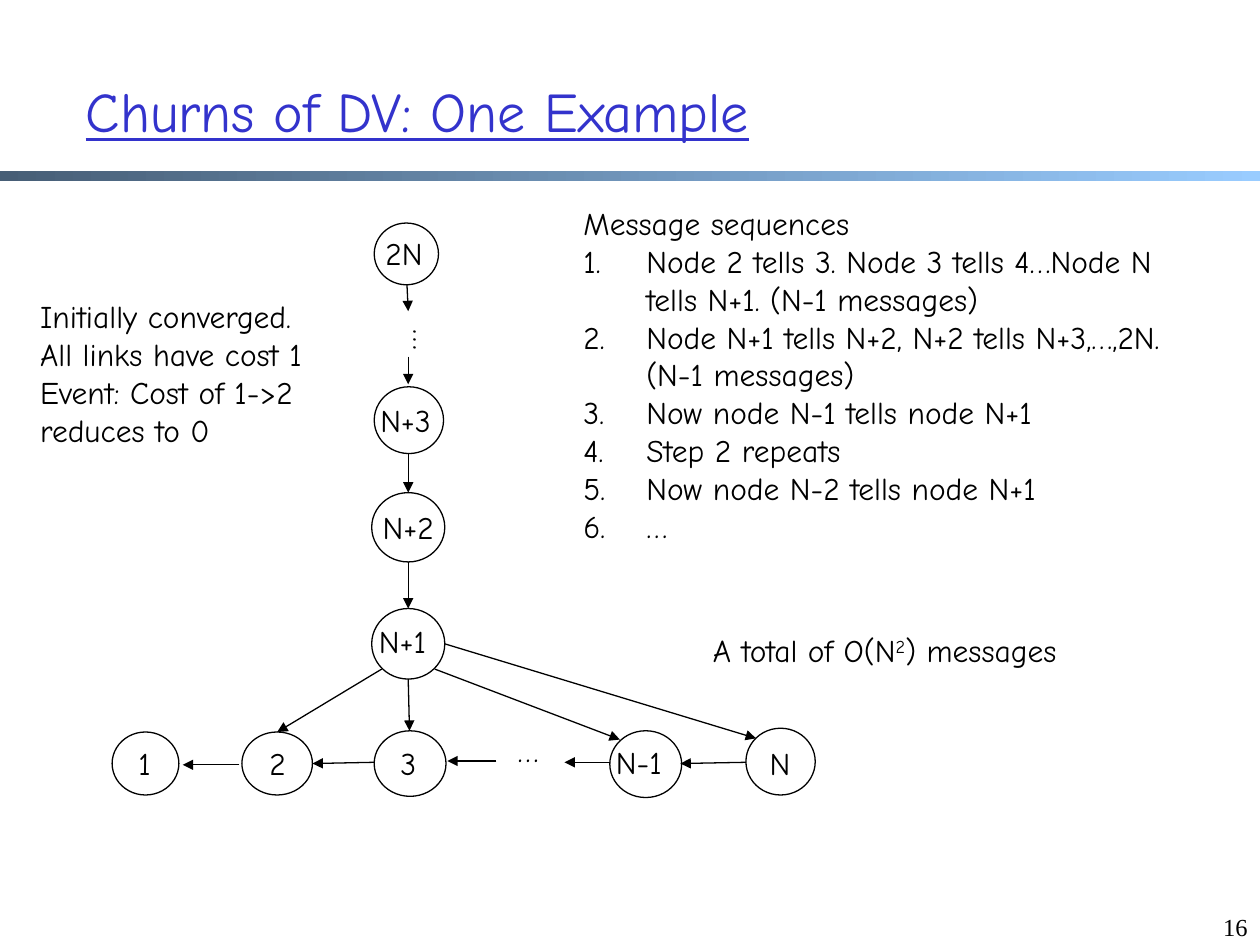
"""Build the slide on distance-vector churn with its node graph and message list."""
from lxml import etree
from pptx import Presentation
from pptx import util as u
from pptx.dml.color import RGBColor
from pptx.enum import shapes, text
from pptx.oxml import ns

FONT = "Comic Neue"
TITLE = "Churns of DV: One Example"
SETUP = ["Initially converged.", "All links have cost 1",
         "Event: Cost of 1->2 reduces to 0"]
HEADING = "Message sequences"
STEPS = ["Node 2 tells 3. Node 3 tells 4…Node N tells N+1. (N-1 messages)",
         "Node N+1 tells N+2, N+2 tells N+3,…,2N. (N-1 messages)",
         "Now node N-1 tells node N+1", "Step 2 repeats",
         "Now node N-2 tells node N+1", "…"]
TOTAL = ["A total of O(N", "2", ") messages"]
NODES = [
    ("2N", (2.97, 1.77, 0.51, 0.49), (2.96, 1.81, 0.55, 0.4)),
    ("N+3", (2.97, 3.07, 0.55, 0.53), (2.92, 3.13, 0.67, 0.4)),
    ("N+2", (2.95, 3.91, 0.58, 0.55), None),
    ("N+1", (2.95, 4.83, 0.58, 0.56), (2.91, 4.89, 0.63, 0.4)),
    ("1", (0.89, 5.81, 0.53, 0.5), (1, 5.86, 0.31, 0.4)),
    ("2", (1.92, 5.81, 0.56, 0.5), (2.04, 5.86, 0.35, 0.4)),
    ("3", (2.97, 5.8, 0.57, 0.52), (3.08, 5.86, 0.35, 0.4)),
    ("N-1", (4.84, 5.8, 0.57, 0.53), (4.79, 5.85, 0.62, 0.4)),
    ("N", (5.92, 5.78, 0.55, 0.53), (6.01, 5.86, 0.4, 0.4)),
]
CHAIN = [(3.23, 2.26, 3.24, 2.47), (3.24, 2.83, 3.24, 3.05),
         (3.24, 3.6, 3.24, 3.91), (3.24, 4.46, 3.24, 4.83)]
FAN = [(3.03, 5.31, 2.2, 5.81), (3.24, 5.39, 3.25, 5.8),
       (3.45, 5.31, 4.92, 5.87), (3.53, 5.11, 6, 5.86)]
ROW = [(5.92, 6.05, 5.4, 6.06), (4.84, 6.05, 4.48, 6.05), (3.94, 6.04, 3.55, 6.04),
       (2.97, 6.05, 2.48, 6.06), (1.9, 6.07, 1.45, 6.07)]


def rgb(value):
    return RGBColor.from_string(value)


def inches(values):
    return [u.Inches(v) for v in values]


def sub(parent, tag, **attrs):
    return etree.SubElement(parent, ns.qn(tag), attrs)


def place(sp, box):
    sp.left, sp.top, sp.width, sp.height = inches(box)


def style(tf, size=18, color="000000", name=FONT):
    for p in tf.paragraphs:
        for r in p.runs:
            r.font.size, r.font.name = u.Pt(size), name
            r.font.color.rgb = rgb(color)


def add_text(s, box, content, wrap=False, **font):
    tf = s.shapes.add_textbox(*inches(box)).text_frame
    tf.word_wrap = wrap
    tf.auto_size = text.MSO_AUTO_SIZE.SHAPE_TO_FIT_TEXT
    tf.text = content
    style(tf, **font)
    return tf


def add_bar(s):
    sp = s.shapes.add_shape(shapes.MSO_SHAPE.RECTANGLE, *inches((0, 1.36, 10, 0.08)))
    sp.shadow.inherit = False
    sp.line.fill.background()
    sp.fill.gradient()
    sp.fill.gradient_angle = 0
    for stop, color, at in zip(sp.fill.gradient_stops, ("475E76", "99CCFF"), (0, 1)):
        stop.color.rgb, stop.position = rgb(color), at


def add_node(s, label, box, label_box):
    sp = s.shapes.add_shape(shapes.MSO_SHAPE.OVAL, *inches(box))
    sp.shadow.inherit = False
    sp.fill.background()
    sp.line.color.rgb, sp.line.width = rgb("000000"), u.Pt(0.75)
    if label_box:
        add_text(s, label_box, label)
    else:
        tf = sp.text_frame
        tf.word_wrap, tf.text = False, label
        tf.paragraphs[0].alignment = text.PP_ALIGN.CENTER
        style(tf)


def add_arrow(s, ends):
    c = s.shapes.add_connector(shapes.MSO_CONNECTOR.STRAIGHT, *inches(ends))
    c.line.color.rgb, c.line.width = rgb("000000"), u.Pt(0.75)
    sub(c.line._get_or_add_ln(), "a:tailEnd", type="triangle")
    sub(c._element.spPr, "a:effectLst")


def fill_list(sp):
    place(sp, (4.53, 1.57, 4.79, 3.13))
    tf = sp.text_frame
    tf.text = "\n".join([HEADING] + STEPS)
    tf.auto_size = text.MSO_AUTO_SIZE.NONE
    style(tf)
    for i, p in enumerate(tf.paragraphs):
        p.space_before = u.Pt(0)
        pPr = p._p.get_or_add_pPr()
        pPr.set("marL", str(u.Inches(0.5)))
        pPr.set("indent", str(u.Inches(-0.5)))
        if i:
            sub(pPr, "a:buFont", typeface=FONT)
            sub(pPr, "a:buAutoNum", type="arabicPeriod")
        else:
            sub(pPr, "a:buNone")


def main():
    prs = Presentation()
    prs.slide_width, prs.slide_height = inches((10, 7.5))
    s = prs.slides.add_slide(prs.slide_layouts[1])
    add_bar(s)

    title = s.shapes.title
    place(title, (0.58, 0.25, 8.77, 1.25))
    tf = title.text_frame
    tf.text = TITLE
    tf.vertical_anchor = text.MSO_ANCHOR.MIDDLE
    p = tf.paragraphs[0]
    p.alignment = text.PP_ALIGN.LEFT
    style(tf, 32, "3333CC")
    p.runs[0].font.underline = True
    fill_list(s.placeholders[1])

    for node in NODES:
        add_node(s, *node)
    for ends in CHAIN + FAN + ROW:
        add_arrow(s, ends)
    tf = add_text(s, (3.08, 2.52, 0.5, 0.27), "…")
    tf._txBody.bodyPr.set("vert", "eaVert")
    add_text(s, (4.01, 5.75, 0.37, 0.4), "…")

    add_text(s, (0.22, 2.31, 2.35, 1.31), "\n".join(SETUP), wrap=True)
    tf = add_text(s, (5.56, 4.96, 3.36, 0.4), TOTAL[0])
    p = tf.paragraphs[0]
    for part in TOTAL[1:]:
        p.add_run().text = part
    style(tf)
    p.runs[1]._r.get_or_add_rPr().set("baseline", "30000")
    tf = add_text(s, (9.25, 7.19, 0.75, 0.31), "16", wrap=True, size=14,
                  name="Times New Roman")
    tf.paragraphs[0].alignment = text.PP_ALIGN.RIGHT
    prs.save("out.pptx")


if __name__ == "__main__":
    main()
